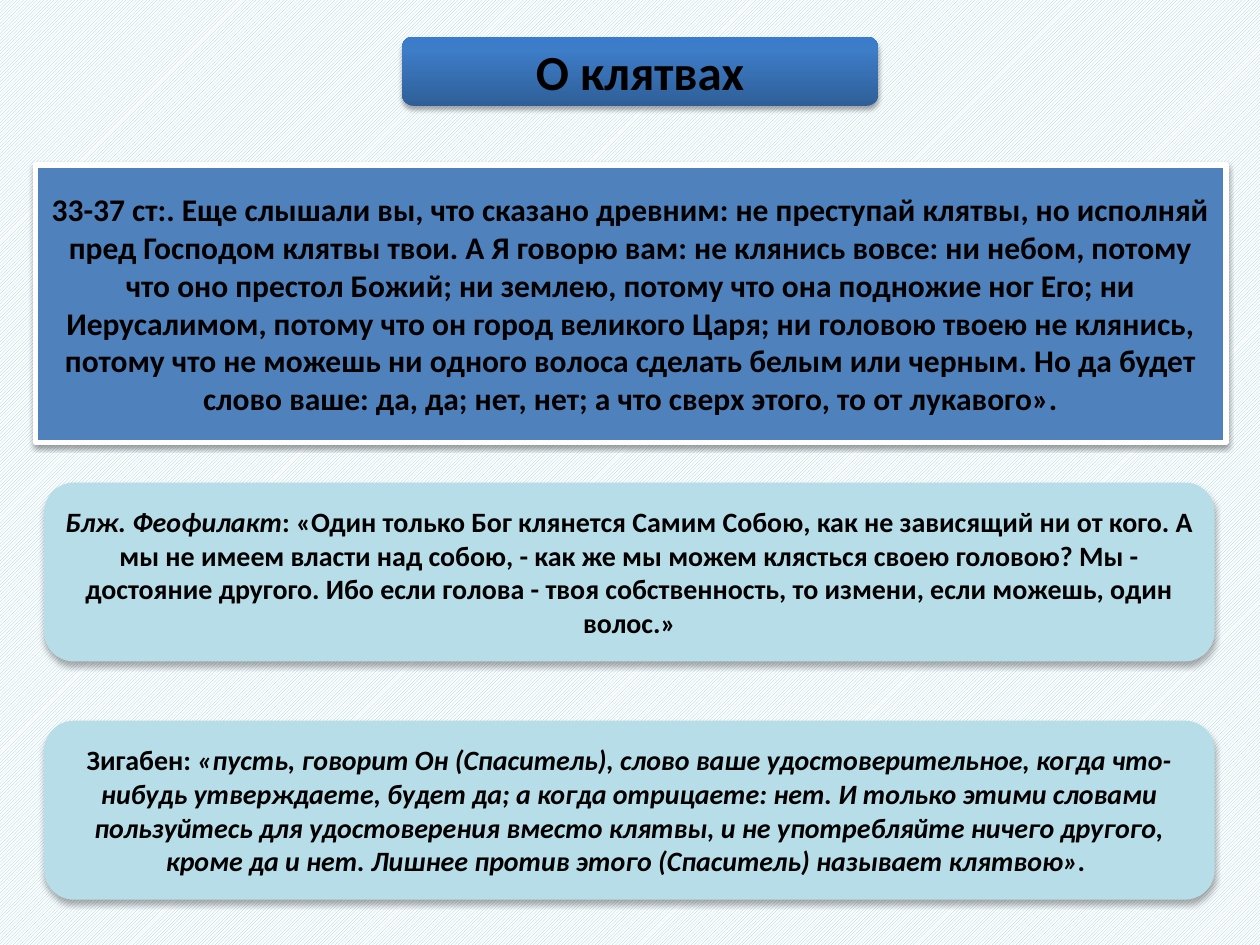
"""Builds a slide on oaths: a verse and two commentaries under a title."""
import copy

import pptx
import pptx.dml.color
import pptx.enum.dml
import pptx.enum.shapes
import pptx.enum.text
import pptx.oxml
import pptx.oxml.ns
import pptx.util

RGB = pptx.dml.color.RGBColor
BLACK = RGB(0x00, 0x00, 0x00)
WHITE = RGB(0xFF, 0xFF, 0xFF)
STRIPE = RGB(0x93, 0xCD, 0xDD)
VERSE_BLUE = RGB(0x4F, 0x81, 0xBD)
COMMENT_BLUE = RGB(0xB7, 0xDE, 0xE8)
BANNER_STOPS = [
    (0, RGB(0x2F, 0x5F, 0x99)),
    (0.8, RGB(0x3D, 0x7C, 0xC7)),
    (1, RGB(0x3A, 0x7C, 0xCB)),
]
ROUNDED = pptx.enum.shapes.MSO_SHAPE.ROUNDED_RECTANGLE
RECTANGLE = pptx.enum.shapes.MSO_SHAPE.RECTANGLE
COLUMNS, ROWS = 100, 75

VERSE = (
    "33-37 ст:. Еще слышали вы, что сказано древним: не преступай клятвы, но исполняй "
    "пред Господом клятвы твои. А Я говорю вам: не клянись вовсе: ни небом, потому "
    "что оно престол Божий; ни землею, потому что она подножие ног Его; ни "
    "Иерусалимом, потому что он город великого Царя; ни головою твоею не клянись, "
    "потому что не можешь ни одного волоса сделать белым или черным. Но да будет "
    "слово ваше: да, да; нет, нет; а что сверх этого, то от лукавого»."
)
THEOPHYLACT = [
    ("Блж. Феофилакт", True),
    (": «Один только Бог клянется Самим Собою, как не зависящий ни от кого. А "
     "мы не имеем власти над собою, - как же мы можем клясться своею головою? Мы - "
     "достояние другого. Ибо если голова - твоя собственность, то измени, если можешь, "
     "один волос.»", False),
]
ZIGABENUS = [
    ("Зигабен: ", False),
    ("«пусть, говорит Он (Спаситель), слово ваше удостоверительное, когда что-нибудь "
     "утверждаете, будет да; а когда отрицаете: нет. И только этими словами "
     "пользуйтесь для удостоверения вместо клятвы, и не употребляйте ничего другого, "
     "кроме да и нет. Лишнее против этого (Спаситель) называет клятвою». ", True),
]


class OathSlide:
    """Holds the text style, the grid and the current slide."""

    font_style = {"name": "Calibri", "bold": True}

    def __init__(self, deck):
        self.cell_width = deck.slide_width / COLUMNS
        self.cell_height = deck.slide_height / ROWS
        self.slide = deck.slides.add_slide(deck.slide_layouts[5])

    def place(self, column, row, columns, rows):
        """Turns grid cells into left, top, width and height."""
        return (int(column * self.cell_width), int(row * self.cell_height),
                int(columns * self.cell_width), int(rows * self.cell_height))

    def background(self, stripe, paper):
        """Fills the slide with diagonal stripes."""
        fill = self.slide.background.fill
        fill.patterned()
        fill.pattern = pptx.enum.dml.MSO_PATTERN.LIGHT_UPWARD_DIAGONAL
        fill.fore_color.rgb = stripe
        fill.back_color.rgb = paper

    def label(self, holder, runs, size):
        """Sets centred runs, each a text and its italic flag."""
        frame = holder.text_frame
        frame.word_wrap = True
        frame.vertical_anchor = pptx.enum.text.MSO_ANCHOR.MIDDLE
        paragraph = frame.paragraphs[0]
        paragraph.alignment = pptx.enum.text.PP_ALIGN.CENTER
        for text, italic in runs:
            run = paragraph.add_run()
            run.text = text
            style = {**self.font_style, "size": pptx.util.Pt(size), "italic": italic}
            for key, value in style.items():
                setattr(run.font, key, value)
            run.font.color.rgb = BLACK

    def shade(self, panel, opacity, blur, distance):
        """Drops a black shadow straight down, in percent and points."""
        panel.shadow.inherit = False
        effects = panel.element.spPr.find(pptx.oxml.ns.qn("a:effectLst"))
        effects.append(pptx.oxml.parse_xml(
            f'<a:outerShdw {pptx.oxml.ns.nsdecls("a")} blurRad="{pptx.util.Pt(blur)}" '
            f'dist="{pptx.util.Pt(distance)}" dir="5400000" rotWithShape="0">'
            f'<a:srgbClr val="000000"><a:alpha val="{opacity * 1000}"/></a:srgbClr>'
            '</a:outerShdw>'))

    def panel(self, outline, cells, shadow, color=None, border=None):
        """Adds a shadowed shape, with a white border if its width is given."""
        panel = self.slide.shapes.add_shape(outline, *self.place(*cells))
        if color is not None:
            panel.fill.solid()
            panel.fill.fore_color.rgb = color
        if border:
            panel.line.color.rgb = WHITE
            panel.line.width = pptx.util.Pt(border)
        else:
            panel.line.fill.background()
        self.shade(panel, *shadow)
        return panel

    def title(self, text, size, cells, stops, shadow):
        """Sets the title over a gradient banner."""
        banner = self.panel(ROUNDED, cells, shadow)
        banner.fill.gradient()
        banner.fill.gradient_angle = 90
        stop_list = next(banner.element.iter(pptx.oxml.ns.qn("a:gsLst")))
        stop_list.append(copy.deepcopy(stop_list[-1]))
        for stop, (position, color) in zip(banner.fill.gradient_stops, stops):
            stop.position = position
            stop.color.rgb = color
        heading = self.slide.shapes.title
        banner.element.addnext(heading.element)
        for key, value in zip(("left", "top", "width", "height"), self.place(*cells)):
            setattr(heading, key, value)
        self.label(heading, [(text, False)], size)


def main():
    """Builds and saves the deck."""
    deck = pptx.Presentation()
    deck.slide_width = pptx.util.Inches(10)
    deck.slide_height = pptx.util.Inches(7.5)
    oaths = OathSlide(deck)
    oaths.background(STRIPE, WHITE)
    oaths.title("О клятвах", 28, (31.9, 2.9, 37.8, 5.5), BANNER_STOPS, (35, 3.1, 1.8))
    verse = oaths.panel(RECTANGLE, (2.8, 13.1, 94.5, 22), (38, 3.1, 1.6), VERSE_BLUE, 3)
    oaths.label(verse, [(VERSE, False)], 18)
    for row, comment in ((57.2, ZIGABENUS), (38.3, THEOPHYLACT)):
        card = oaths.panel(ROUNDED, (3.5, row, 92.9, 14.2), (32, 3.5, 2.2), COMMENT_BLUE)
        oaths.label(card, comment, 16)
    deck.save("out.pptx")


if __name__ == "__main__":
    main()
